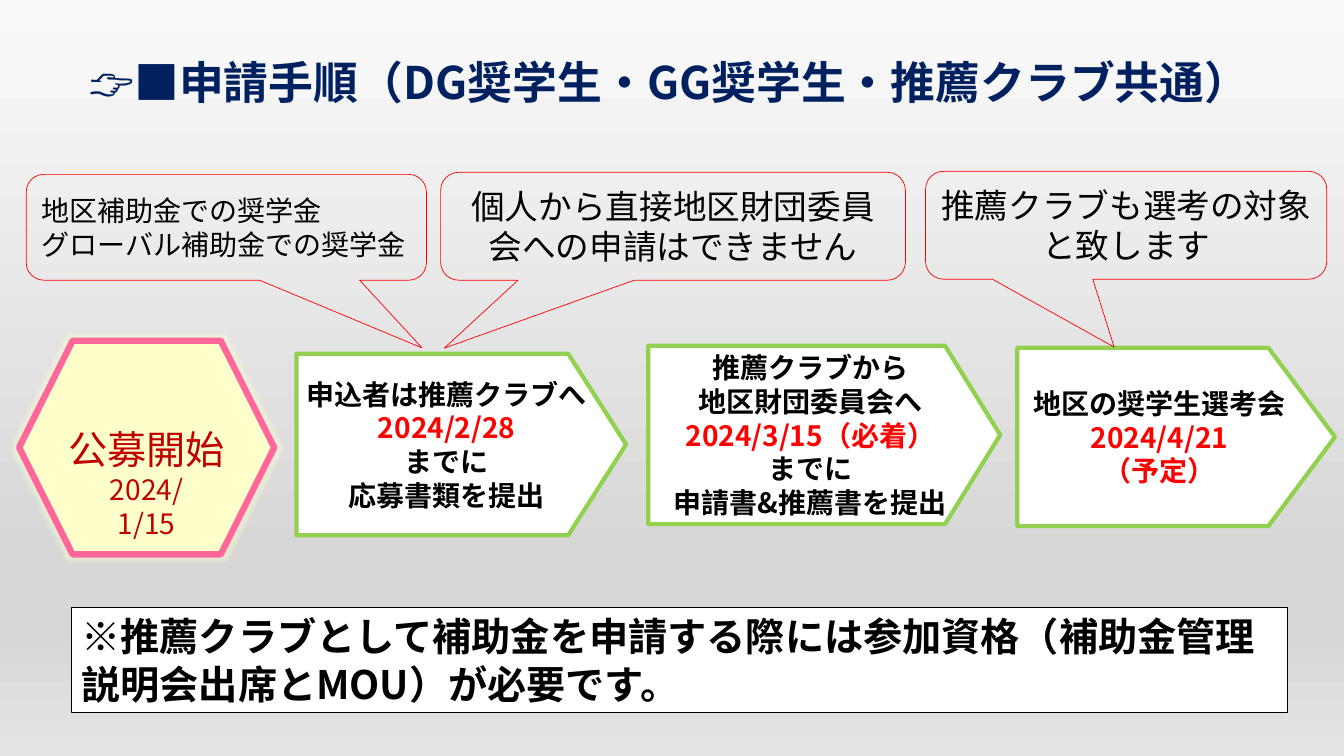
from lxml.etree import SubElement
from pptx import Presentation
from pptx.dml.color import RGBColor
from pptx.enum.shapes import MSO_SHAPE as SHAPE
from pptx.enum.text import MSO_ANCHOR as ANCHOR, PP_ALIGN as ALIGN
from pptx.oxml.ns import qn
from pptx.util import Inches, Pt

FONT = "Noto Sans CJK JP"
RED, GREEN, BLACK, WHITE = "FF0000", "92D050", "000000", "FFFFFF"
BACKGROUND = [(0, "FAFAFA"), (74, "D7D7D7"), (83, "D7D7D7"), (100, "E4E4E4")]

CALLOUTS = [
    ((0.26, 1.73, 3.97, 1.05), (0.489, 1.14),
     ["地区補助金での奨学金", "グローバル補助金での奨学金"], 20, ALIGN.JUSTIFY),
    ((4.37, 1.71, 4.61, 1.07), (-0.492, 1.13),
     ["個人から直接地区財団委員会への申請はできません"], 24, ALIGN.CENTER),
    ((9.18, 1.7, 3.98, 1.07), (-0.03, 1.13),
     ["推薦クラブも選考の対象と致します"], 24, ALIGN.CENTER),
]
STEPS = [
    ((2.94, 3.51, 3.27, 1.8), 0.319,
     ["申込者は推薦クラブへ", ("2024/2/28", RED), "までに", "応募書類を提出"]),
    ((6.43, 3.43, 3.49, 1.77), 0.309,
     ["推薦クラブから", "地区財団委員会へ", ("2024/3/15（必着）", RED),
      "までに", "申請書&推薦書を提出"]),
    ((10.09, 3.45, 3.15, 1.77), 0.373,
     ["地区の奨学生選考会", ("2024/4/21", RED), ("（予定）", RED)]),
]


def rgb(color):
    return RGBColor.from_string(color)


def set_background(s, stops):
    fill = s.background.fill
    fill.gradient()
    fill.gradient_angle = 270
    gradient = s.element.xpath(".//p:bg//a:gsLst")[0]
    for old in list(gradient):
        gradient.remove(old)
    for pos, color in stops:
        stop = SubElement(gradient, qn("a:gs"), pos=str(pos * 1000))
        SubElement(stop, qn("a:srgbClr"), val=color)


def write(tf, lines, size=20, color=BLACK, bold=False, align=ALIGN.CENTER,
          anchor=ANCHOR.MIDDLE, margins=(0.1, 0.05)):
    """Fill a text frame; a line is a string or a (string, colour) pair."""
    tf.word_wrap = True
    tf.vertical_anchor = anchor
    tf.margin_left = tf.margin_right = Inches(margins[0])
    tf.margin_top = tf.margin_bottom = Inches(margins[1])
    for i, line in enumerate(lines):
        text, line_color = (line, color) if isinstance(line, str) else line
        p = tf.add_paragraph() if i else tf.paragraphs[0]
        p.alignment = align
        r = p.add_run()
        r.text = text
        r.font.size = Pt(size)
        r.font.bold = bold
        r.font.color.rgb = rgb(line_color)
        r.font.name = FONT
        SubElement(r.font._element, qn("a:ea"), typeface=FONT)


def add_box(s, kind, box, line, width, fill=None, adj=()):
    sp = s.shapes.add_shape(kind, *map(Inches, box))
    sp.shadow.inherit = False
    for i, value in enumerate(adj):
        sp.adjustments[i] = value
    if fill:
        sp.fill.solid()
        sp.fill.fore_color.rgb = rgb(fill)
    else:
        sp.fill.background()
    sp.line.color.rgb = rgb(line)
    sp.line.width = Pt(width)
    return sp


def add_glow(sp, color, radius, alpha):
    effects = sp.element.spPr.find(qn("a:effectLst"))
    glow = SubElement(effects, qn("a:glow"), rad=str(Pt(radius)))
    clr = SubElement(glow, qn("a:srgbClr"), val=color)
    SubElement(clr, qn("a:alpha"), val=str(alpha * 1000))


def add_title(s, text):
    title = s.shapes.title
    title.left, title.top = Inches(0.78), Inches(0.42)
    title.width, title.height = Inches(12.5), Inches(0.84)
    write(title.text_frame, [text], size=32, color="002060", bold=True,
          align=ALIGN.LEFT)
    title.text_frame.paragraphs[0].line_spacing = 0.9


def add_start(s):
    sp = add_box(s, SHAPE.HEXAGON, (0.19, 3.38, 2.53, 2.12), "FF6699", 4.5,
                 "FFFFCC")
    add_glow(sp, "FFFFCC", 5, 40)
    tf = sp.text_frame
    write(tf, ["公募開始", "2024/", "1/15"], color="C00000", anchor=ANCHOR.TOP)
    heading = tf.paragraphs[0]
    heading.line_spacing = 2.0
    heading.runs[0].font.size = Pt(28)


def main():
    prs = Presentation()
    prs.slide_width, prs.slide_height = Inches(13.33), Inches(7.5)
    s = prs.slides.add_slide(prs.slide_layouts[5])
    set_background(s, BACKGROUND)
    add_title(s, "👉■申請手順（DG奨学生・GG奨学生・推薦クラブ共通）")

    for box, point, lines in STEPS:
        sp = add_box(s, SHAPE.PENTAGON, box, GREEN, 3, WHITE, [point])
        write(sp.text_frame, lines, bold=True, margins=(0.08, 0.01))
    add_start(s)
    for box, tip, lines, size, align in CALLOUTS:
        sp = add_box(s, SHAPE.ROUNDED_RECTANGULAR_CALLOUT, box, RED, 0.5,
                     adj=(*tip, 0.167))
        write(sp.text_frame, lines, size=size, align=align)

    note = add_box(s, SHAPE.RECTANGLE, (0.71, 6.03, 12.06, 1.04), BLACK, 0.75,
                   WHITE)
    write(note.text_frame,
          ["※推薦クラブとして補助金を申請する際には参加資格"
           "（補助金管理説明会出席とMOU）が必要です。"],
          size=28, bold=True, align=ALIGN.LEFT, anchor=ANCHOR.TOP)
    prs.save("out.pptx")


if __name__ == "__main__":
    main()
